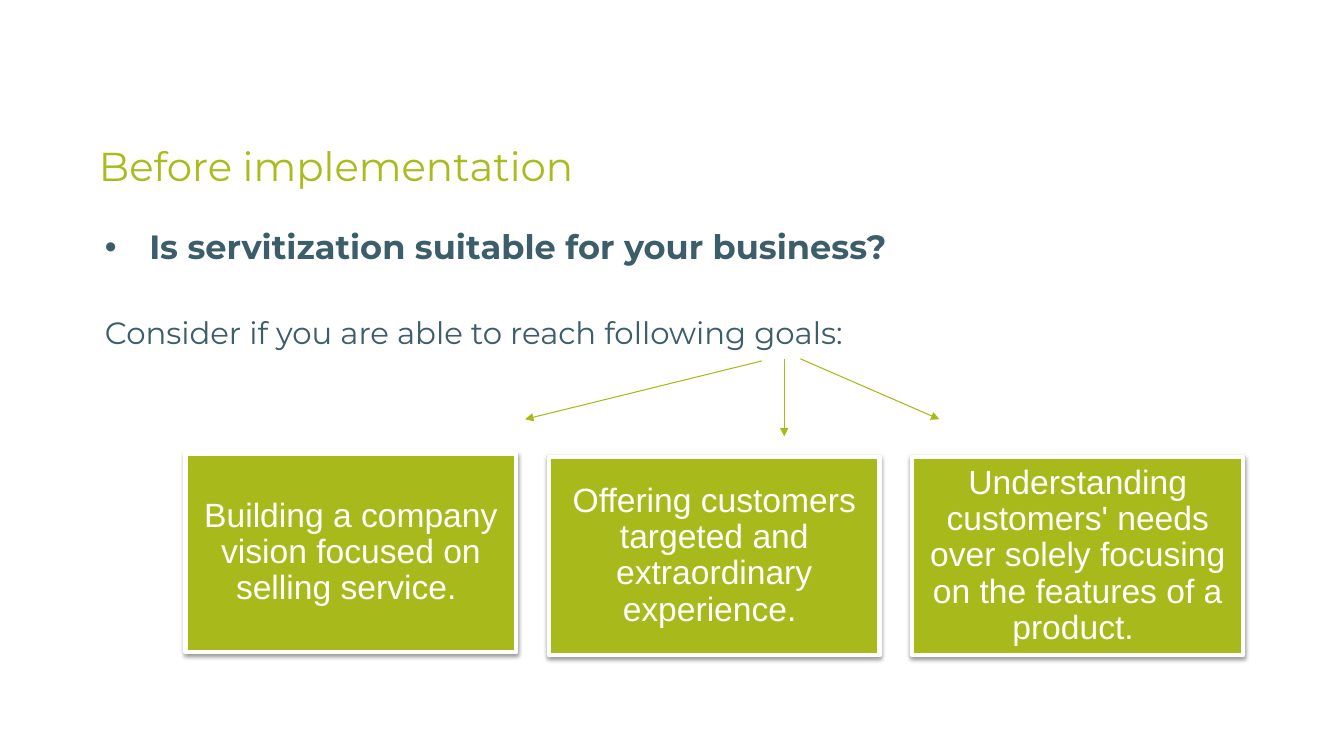
from dataclasses import dataclass

from lxml import etree
from pptx import Presentation
from pptx.dml.color import RGBColor
from pptx.enum.shapes import MSO_CONNECTOR, MSO_SHAPE
from pptx.enum.text import MSO_ANCHOR, MSO_AUTO_SIZE, PP_ALIGN
from pptx.oxml.ns import qn
from pptx.util import Pt

RECTANGLE = MSO_SHAPE.RECTANGLE
STRAIGHT = MSO_CONNECTOR.STRAIGHT
LEFT, CENTER = PP_ALIGN.LEFT, PP_ALIGN.CENTER
TOP, MIDDLE = MSO_ANCHOR.TOP, MSO_ANCHOR.MIDDLE
NO_FIT = MSO_AUTO_SIZE.NONE

HEADING_FONT, GOAL_FONT = "Montserrat", "Arial"
TITLE_GREEN, BOX_GREEN, ARROW_GREEN = "AABB1D", "A8BA1B", "A9B918"
SLATE, WHITE, BLACK = "3C5D6A", "FFFFFF", "000000"

GOAL_LEFT, GOAL_PITCH = 132.5, 259.6
GOAL_WIDTH, GOAL_HEIGHT = 236.2, 141.8


@dataclass(frozen=True)
class Goal:
    text: str
    top: float


@dataclass(frozen=True)
class Arrow:
    start: tuple[float, float]
    end: tuple[float, float]


GOALS = [
    Goal("Building a\u00a0company vision focused on selling service. ", 324),
    Goal("Offering customers targeted and extraordinary experience. ", 326.2),
    Goal("Understanding customers' needs over solely focusing on the "
         "features of a product. ", 326.2),
]
ARROWS = [
    Arrow((544.3, 257.8), (375.1, 299.5)),
    Arrow((560.2, 256.3), (560.2, 311.8)),
    Arrow((571.7, 256.3), (671, 299.5)),
]


def rgb(code: str) -> RGBColor:
    return RGBColor.from_string(code)


def place(shape, left: float, top: float, width: float, height: float) -> None:
    shape.left, shape.top = Pt(left), Pt(top)
    shape.width, shape.height = Pt(width), Pt(height)


def set_frame(frame, anchor, margin_x: float, margin_y: float) -> None:
    frame.word_wrap = True
    frame.auto_size = NO_FIT
    frame.vertical_anchor = anchor
    frame.margin_left = frame.margin_right = Pt(margin_x)
    frame.margin_top = frame.margin_bottom = Pt(margin_y)


def write(paragraph, text: str, size: float, font: str, color: str,
          align=LEFT, bold: bool = False, before: float = 0) -> None:
    paragraph.alignment = align
    paragraph.line_spacing = 0.9
    paragraph.space_before = Pt(before)
    paragraph.space_after = Pt(0)
    run = paragraph.add_run()
    run.text = text
    run.font.size = Pt(size)
    run.font.name = font
    run.font.bold = bold
    run.font.color.rgb = rgb(color)


def set_bullet(paragraph, margin: float, indent: float, symbol: str = "") -> None:
    props = paragraph._p.get_or_add_pPr()
    props.set("marL", str(Pt(margin)))
    props.set("indent", str(Pt(indent)))
    if symbol:
        tint = etree.SubElement(props, qn("a:buClr"))
        etree.SubElement(tint, qn("a:srgbClr"), val=SLATE)
        etree.SubElement(props, qn("a:buFont"), typeface="Arial")
        etree.SubElement(props, qn("a:buChar"), char=symbol)
    else:
        etree.SubElement(props, qn("a:buNone"))


def add_goal(slide, index: int, goal: Goal) -> None:
    box = slide.shapes.add_shape(
        RECTANGLE, Pt(GOAL_LEFT + index * GOAL_PITCH), Pt(goal.top),
        Pt(GOAL_WIDTH), Pt(GOAL_HEIGHT))
    box.fill.solid()
    box.fill.fore_color.rgb = rgb(BOX_GREEN)
    box.line.color.rgb = rgb(WHITE)
    box.line.width = Pt(3)
    box.shadow.inherit = False
    effects = box._element.spPr.find(qn("a:effectLst"))
    shadow = etree.SubElement(
        effects, qn("a:outerShdw"), blurRad=str(Pt(3.1)), dist=str(Pt(1.6)),
        dir="5400000", rotWithShape="0")
    tint = etree.SubElement(shadow, qn("a:srgbClr"), val=BLACK)
    etree.SubElement(tint, qn("a:alpha"), val="38000")
    set_frame(box.text_frame, MIDDLE, 7.2, 7.2)
    write(box.text_frame.paragraphs[0], goal.text, 24, GOAL_FONT, WHITE, CENTER)


def add_arrow(slide, arrow: Arrow) -> None:
    ends = [Pt(value) for value in arrow.start + arrow.end]
    link = slide.shapes.add_connector(STRAIGHT, *ends)
    link.line.color.rgb = rgb(ARROW_GREEN)
    link.line.width = Pt(0.75)
    etree.SubElement(link.line._get_or_add_ln(), qn("a:tailEnd"), type="triangle")
    etree.SubElement(link._element.spPr, qn("a:effectLst"))


def main() -> None:
    deck = Presentation()
    deck.slide_width, deck.slide_height = Pt(960), Pt(540)
    slide = deck.slides.add_slide(deck.slide_layouts[1])

    # Title
    heading = slide.shapes.title
    place(heading, 63.4, 100.1, 797.8, 41)
    set_frame(heading.text_frame, MIDDLE, 7.2, 3.6)
    write(heading.text_frame.paragraphs[0], "Before implementation",
          28.8, HEADING_FONT, TITLE_GREEN)

    # Question and lead-in
    body = slide.placeholders[1]
    place(body, 63.4, 161.3, 797.8, 276.5)
    set_frame(body.text_frame, TOP, 7.2, 3.6)
    question = body.text_frame.paragraphs[0]
    set_bullet(question, 36, -31.7, "•")
    write(question, "Is servitization suitable for your business?",
          24, HEADING_FONT, SLATE, bold=True)
    lead_in = body.text_frame.add_paragraph()
    set_bullet(lead_in, 4.3, 0)
    write(lead_in, "Consider if you are able to reach following goals:",
          22, HEADING_FONT, SLATE, before=36.3)

    # Goals and the arrows to them
    for index, goal in enumerate(GOALS):
        add_goal(slide, index, goal)
    for arrow in ARROWS:
        add_arrow(slide, arrow)

    deck.save("out.pptx")


if __name__ == "__main__":
    main()
